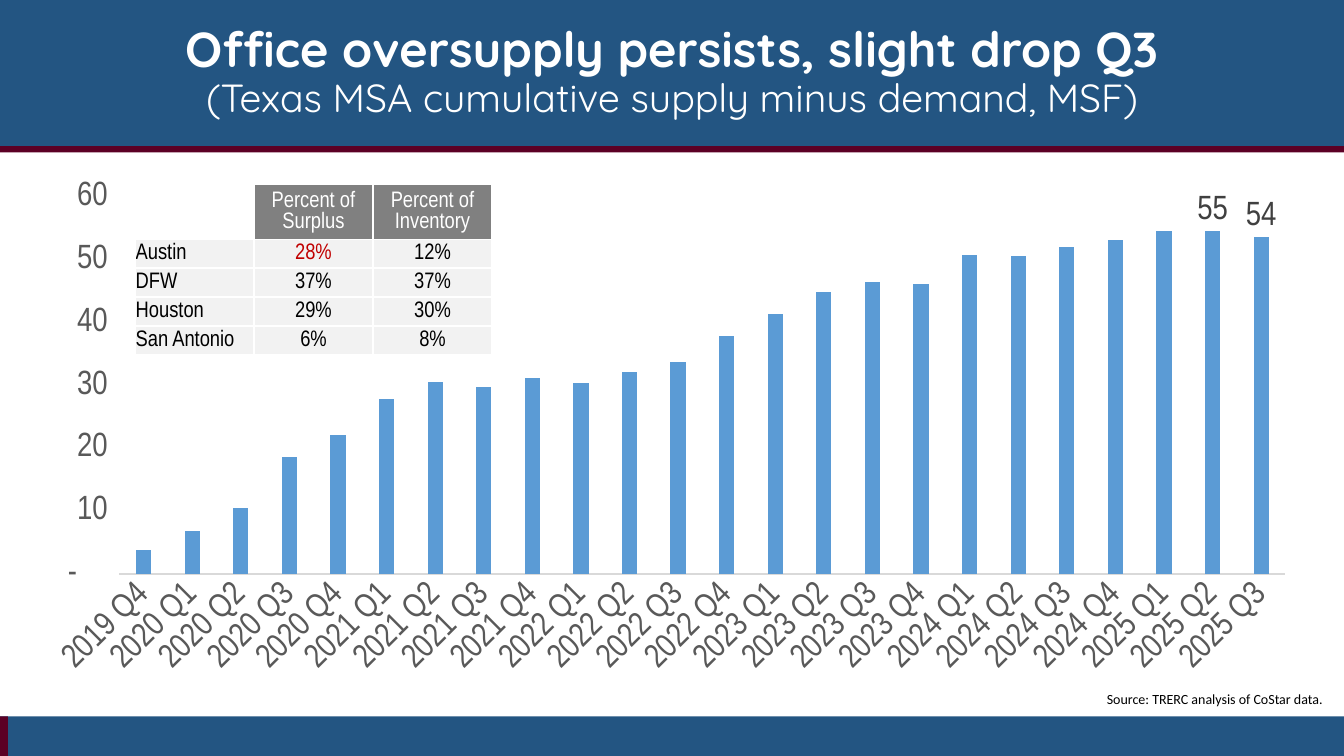
import pptx
import pptx.chart.data
import pptx.dml.color
import pptx.enum.chart
import pptx.enum.shapes
import pptx.enum.text
import pptx.oxml
import pptx.oxml.ns
import pptx.util
from pptx.util import Cm, Pt

ALIGN = pptx.enum.text.PP_ALIGN
MIDDLE = pptx.enum.text.MSO_ANCHOR.MIDDLE
BLUE, MAROON, WHITE, BLACK = "235582", "5C0025", "FFFFFF", "000000"
GREY, AXIS_TEXT, AXIS_LINE = "808080", "595959", "D9D9D9"
PALE, RED, BAR = "F2F2F2", "C00000", "5B9BD5"
NARROW = "Arial Narrow"
AXIS_FORMAT = '_(* #,##0_);_(* \\(#,##0\\);_(* "-"??_);_(@_)'

# Quarters run from 2019 Q4 to 2025 Q3
SURPLUS = [3.8, 6.9, 10.5, 18.7, 22.2, 27.9, 30.6, 29.8, 31.2, 30.5, 32.2, 33.8,
           38.0, 41.4, 44.9, 46.6, 46.2, 50.9, 50.7, 52.1, 53.2, 54.6, 54.7, 53.7]
QUARTERS = [f"{2019 + n // 4} Q{n % 4 + 1}" for n in range(3, 3 + len(SURPLUS))]
METROS = [
    ["", "Percent of\nSurplus", "Percent of Inventory"],
    ["Austin", "28%", "12%"],
    ["DFW", "37%", "37%"],
    ["Houston", "29%", "30%"],
    ["San Antonio", "6%", "8%"],
]


def color(value):
    return pptx.dml.color.RGBColor.from_string(value)


def set_font(font, name, size, value, bold=None):
    font.name, font.size, font.bold = name, Pt(size), bold
    font.color.rgb = color(value)


def set_borders(cell, value):
    properties = cell._tc.get_or_add_tcPr()
    for index, side in enumerate("LRTB"):
        properties.insert(index, pptx.oxml.parse_xml(
            f'<a:ln{side} {pptx.oxml.ns.nsdecls("a")} w="12700"><a:solidFill>'
            f'<a:srgbClr val="{value}"/></a:solidFill></a:ln{side}>'))


class SlideBuilder:
    def __init__(self, deck):
        self.page = deck.slides.add_slide(deck.slide_layouts[5])
        self.shapes = self.page.shapes

    def band(self, left, top, width, height, fill):
        band = self.shapes.add_shape(pptx.enum.shapes.MSO_SHAPE.RECTANGLE,
                                     Cm(left), Cm(top), Cm(width), Cm(height))
        band.shadow.inherit = False
        band.fill.solid()
        band.fill.fore_color.rgb = color(fill)
        band.line.fill.background()

    def title(self, heading, subheading, width, height):
        box = self.shapes.title
        box.left, box.top, box.width, box.height = 0, 0, Cm(width), Cm(height)
        box.fill.solid()
        box.fill.fore_color.rgb = color(BLUE)
        frame = box.text_frame
        frame.auto_size = pptx.enum.text.MSO_AUTO_SIZE.NONE
        frame.word_wrap = True
        frame.vertical_anchor = MIDDLE
        para = frame.paragraphs[0]
        para.alignment, para.line_spacing = ALIGN.CENTER, 0.9
        span = para.add_run()
        span.text = heading
        set_font(span.font, "Quicksand", 35, WHITE, True)
        para.add_line_break()
        span = para.add_run()
        span.text = subheading
        set_font(span.font, "Quicksand", 28, WHITE, False)

    def note(self, text, left, top, width, height):
        box = self.shapes.add_textbox(Cm(left), Cm(top), Cm(width), Cm(height))
        frame = box.text_frame
        frame.word_wrap = False
        frame.auto_size = pptx.enum.text.MSO_AUTO_SIZE.SHAPE_TO_FIT_TEXT
        para = frame.paragraphs[0]
        para.text = text
        para.alignment = ALIGN.RIGHT
        set_font(para.font, "Calibri", 10, BLACK)

    def column_chart(self, categories, values, left, top, width, height):
        data = pptx.chart.data.CategoryChartData()
        data.categories = categories
        data.add_series("Series 1", values)
        chart = self.shapes.add_chart(
            pptx.enum.chart.XL_CHART_TYPE.COLUMN_CLUSTERED,
            Cm(left), Cm(top), Cm(width), Cm(height), data).chart
        chart.has_legend = chart.has_title = False
        set_font(chart.font, NARROW, 24, BLACK)

        plot = chart.plots[0]
        plot.gap_width, plot.overlap, plot.vary_by_categories = 219, -27, False
        series = plot.series[0]
        series.format.fill.solid()
        series.format.fill.fore_color.rgb = color(BAR)
        for index in (len(values) - 2, len(values) - 1):
            label = series.points[index].data_label
            set_font(label.font, NARROW, 24, "404040")
            label.position = pptx.enum.chart.XL_LABEL_POSITION.OUTSIDE_END
            element = label._dLbl
            element.find(pptx.oxml.ns.qn("c:idx")).addnext(pptx.oxml.parse_xml(
                f'<c:numFmt {pptx.oxml.ns.nsdecls("c")} formatCode="#,##0" '
                'sourceLinked="0"/>'))

        for axis in (chart.category_axis, chart.value_axis):
            axis.has_major_gridlines = False
            axis.major_tick_mark = pptx.enum.chart.XL_TICK_MARK.NONE
            axis.minor_tick_mark = pptx.enum.chart.XL_TICK_MARK.NONE
            set_font(axis.tick_labels.font, NARROW, 24, AXIS_TEXT)
        line = chart.category_axis.format.line
        line.color.rgb, line.width = color(AXIS_LINE), Pt(0.75)
        text = chart.category_axis._element.find(pptx.oxml.ns.qn("c:txPr"))
        text.find(pptx.oxml.ns.qn("a:bodyPr")).set("rot", "-2700000")
        axis = chart.value_axis
        axis.format.line.fill.background()
        axis.minimum_scale, axis.maximum_scale, axis.major_unit = 0, 60, 10
        axis.tick_labels.number_format = AXIS_FORMAT
        axis.tick_labels.number_format_is_linked = False

    def table(self, rows, left, top, width, height, row_heights):
        table = self.shapes.add_table(len(rows), len(rows[0]), Cm(left), Cm(top),
                                      Cm(width), Cm(height)).table
        table.first_row = table.horz_banding = False
        for r, row in enumerate(rows):
            table.rows[r].height = Cm(row_heights[r])
            for c, text in enumerate(row):
                self.cell(table.cell(r, c), text, r == 0, c == 0)

    def cell(self, cell, text, is_header, is_name):
        cell.text = text
        cell.vertical_anchor = MIDDLE
        cell.margin_left = cell.margin_right = cell.margin_top = Cm(0.02)
        cell.margin_bottom = 0
        if is_header and is_name:
            cell.fill.background()
        else:
            cell.fill.solid()
            cell.fill.fore_color.rgb = color(GREY if is_header else PALE)
        set_borders(cell, WHITE)
        ink = WHITE if is_header else RED if text == "28%" else BLACK
        for para in cell.text_frame.paragraphs:
            para.alignment = ALIGN.LEFT if is_name else ALIGN.CENTER
            set_font(para.font, NARROW, 16, ink)


def main():
    deck = pptx.Presentation()
    deck.slide_width, deck.slide_height = Cm(33.87), Cm(19.05)
    slide = SlideBuilder(deck)
    slide.band(0, 18.05, 33.87, 1, BLUE)
    slide.band(0, 3.68, 33.87, 0.16, MAROON)
    slide.band(0, 18.05, 0.2, 1, MAROON)
    slide.column_chart(QUARTERS, SURPLUS, 0.81, 4.32, 32.23, 12.95)
    slide.title("Office oversupply persists, slight drop Q3",
                "(Texas MSA cumulative supply minus demand, MSF)", 33.87, 3.68)
    slide.note("Source: TRERC analysis of CoStar data.", 27.46, 17.27, 6.12, 0.68)
    slide.table(METROS, 3.4, 4.65, 9, 4.29, [1.04] + [0.73] * 4)
    deck.save("out.pptx")


if __name__ == "__main__":
    main()
